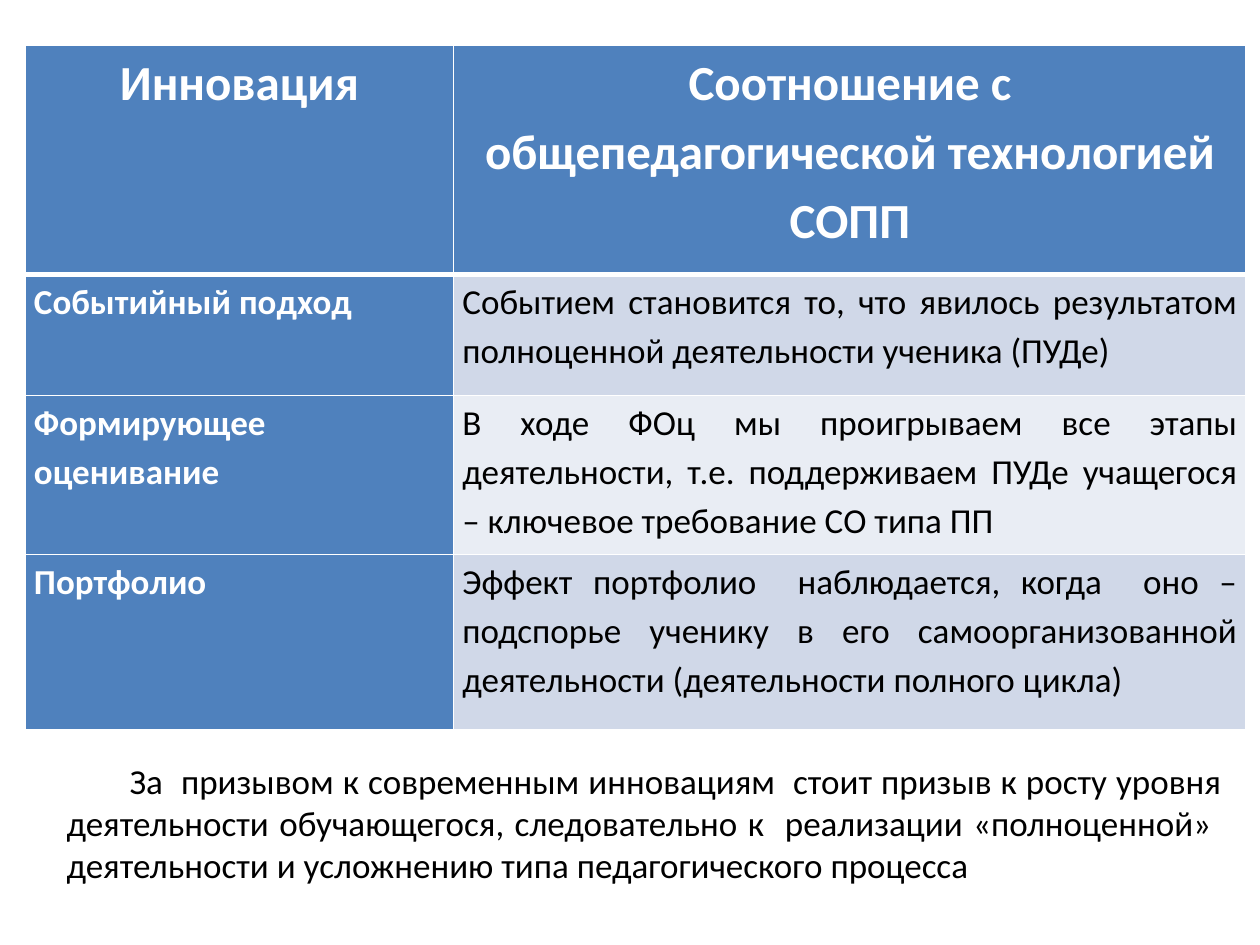
"""Build a slide relating teaching innovations to a general pedagogical technology."""
from lxml import etree
from pptx import Presentation
from pptx.dml.color import RGBColor
from pptx.enum import text
from pptx.oxml.ns import qn
from pptx.util import Inches, Pt


def color(value):
    return RGBColor.from_string(value)


def add_border(cell, side, width):
    line = etree.SubElement(cell._tc.get_or_add_tcPr(), qn(f"a:{side}"), w=str(Pt(width)))
    fill = etree.SubElement(line, qn("a:solidFill"))
    etree.SubElement(fill, qn("a:srgbClr"), val="FFFFFF")


BLUE = "4F81BD"
BANDS = ["D0D8E8", "E9EDF4"]
ROWS = [
    ("Инновация", "Соотношение с общепедагогической технологией СОПП"),
    ("Событийный подход",
     "Событием становится то, что явилось результатом полноценной деятельности ученика (ПУДе)"),
    ("Формирующее оценивание",
     "В ходе ФОц мы проигрываем все этапы деятельности, т.е. поддерживаем ПУДе учащегося "
     "– ключевое требование СО типа ПП"),
    ("Портфолио",
     "Эффект портфолио  наблюдается, когда  оно – подспорье ученику в его "
     "самоорганизованной деятельности (деятельности полного цикла)"),
]
CONCLUSION = (
    "За  призывом к современным инновациям  стоит призыв к росту уровня деятельности "
    "обучающегося, следовательно к  реализации «полноценной»  деятельности и усложнению "
    "типа педагогического процесса"
)

deck = Presentation()
deck.slide_width, deck.slide_height = Inches(10), Inches(7.5)
page = deck.slides.add_slide(deck.slide_layouts[6])

table = page.shapes.add_table(
    len(ROWS), 2, Inches(0.2), Inches(0.36), Inches(9.69), Inches(5.43)
).table
for column, width in zip(table.columns, [3.4, 6.29]):
    column.width = Inches(width)
for row, height in zip(table.rows, [1.82, 0.96, 1.26, 1.39]):
    row.height = Inches(height)

for row_index, row_texts in enumerate(ROWS):
    is_header = row_index == 0
    for column_index, words in enumerate(row_texts):
        is_label = is_header or column_index == 0
        cell = table.cell(row_index, column_index)
        cell.margin_left = cell.margin_right = Inches(0.07)
        cell.margin_top = cell.margin_bottom = 0
        for side in ["lnL", "lnR", "lnT", "lnB"]:
            header_rule = (row_index, side) in [(0, "lnB"), (1, "lnT")]
            add_border(cell, side, 3 if header_rule else 1)
        cell.fill.solid()
        cell.fill.fore_color.rgb = color(BLUE if is_label else BANDS[(row_index - 1) % 2])
        cell.text = words
        para = cell.text_frame.paragraphs[0]
        para.alignment = text.PP_ALIGN.CENTER if is_header else text.PP_ALIGN.JUSTIFY
        para.line_spacing = 1.15
        para.font.name = "Calibri"
        para.font.size = Pt(28 if is_header else 20)
        para.font.bold = is_label
        para.font.color.rgb = color("FFFFFF" if is_label else "000000")

box = page.shapes.add_textbox(Inches(0.43), Inches(5.97), Inches(9.37), Inches(1.11))
frame = box.text_frame
frame.word_wrap = True
frame.auto_size = text.MSO_AUTO_SIZE.SHAPE_TO_FIT_TEXT
frame.vertical_anchor = text.MSO_ANCHOR.MIDDLE
frame.text = CONCLUSION
para = frame.paragraphs[0]
para.alignment = text.PP_ALIGN.JUSTIFY
para._p.get_or_add_pPr().set("indent", str(Inches(0.5)))
para.font.name = "Calibri"
para.font.size = Pt(20)
para.font.color.rgb = color("000000")

deck.save("out.pptx")
